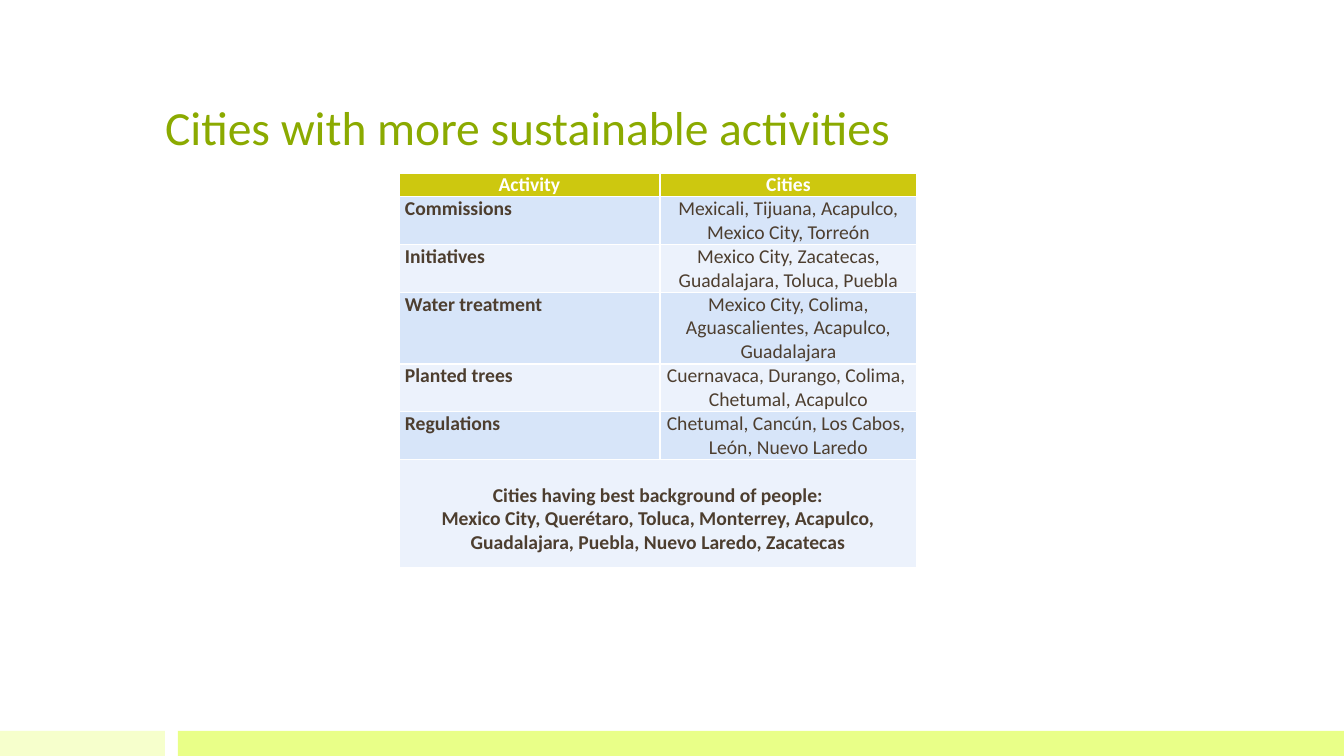
from pptx import Presentation
from pptx.dml.color import RGBColor
from pptx.enum.shapes import MSO_SHAPE
from pptx.enum.text import MSO_ANCHOR, MSO_AUTO_SIZE, PP_ALIGN
from pptx.util import Emu, Pt

RECT = MSO_SHAPE.RECTANGLE
BOTTOM = MSO_ANCHOR.BOTTOM
NO_FIT = MSO_AUTO_SIZE.NONE
LEFT, CENTER = PP_ALIGN.LEFT, PP_ALIGN.CENTER

SCALE = 12192000 / 1344  # EMU in one px
FONT = "Calibri"
WHITE = RGBColor(0xFF, 0xFF, 0xFF)
GREEN = RGBColor(0x8B, 0xAA, 0x00)
PALE = RGBColor(0xF6, 0xFF, 0xCC)
LIME = RGBColor(0xE9, 0xFF, 0x88)
OLIVE = RGBColor(0xCD, 0xC8, 0x0F)
BROWN = RGBColor(0x4D, 0x3E, 0x2F)
BANDS = (RGBColor(0xEC, 0xF2, 0xFC), RGBColor(0xD7, 0xE5, 0xF9))

COLS = (261, 257)
HEIGHTS = (23, 47, 47, 71, 47, 47, 108)
ROWS = (
    ("Activity", "Cities"),
    ("Commissions", "Mexicali, Tijuana, Acapulco, Mexico City, Torreón"),
    ("Initiatives", "Mexico City, Zacatecas, Guadalajara, Toluca, Puebla"),
    ("Water treatment",
     "Mexico City, Colima, Aguascalientes, Acapulco, Guadalajara"),
    ("Planted trees", "Cuernavaca, Durango, Colima, \nChetumal, Acapulco"),
    ("Regulations", "Chetumal, Cancún, Los Cabos, \nLeón, Nuevo Laredo"),
)
SUMMARY = ("Cities having best background of people:\n"
           "Mexico City, Querétaro, Toluca, Monterrey, Acapulco, "
           "Guadalajara, Puebla, Nuevo Laredo, Zacatecas")


def px(n):
    return Emu(round(n * SCALE))


def style(frame, size, color, bold=False, align=LEFT):
    for para in frame.paragraphs:
        para.alignment = align
        para.font.name = FONT
        para.font.size = Pt(size)
        para.font.bold = bold
        para.font.color.rgb = color


def add_bar(slide, left, width, color):
    bar = slide.shapes.add_shape(RECT, px(left), px(731), px(width), px(25))
    bar.shadow.inherit = False
    bar.fill.solid()
    bar.fill.fore_color.rgb = color
    bar.line.fill.background()


def set_title(slide, text):
    title = slide.shapes.title
    title.left, title.top = px(155), px(30)
    title.width, title.height = px(1033), px(130)
    frame = title.text_frame
    frame.text = text
    frame.auto_size = NO_FIT
    frame.vertical_anchor = BOTTOM
    style(frame, 34, GREEN)


def fill_cell(cell, text, fill, color, bold, align, top=0):
    cell.fill.solid()
    cell.fill.fore_color.rgb = fill
    cell.margin_left = cell.margin_right = px(6)
    cell.margin_top, cell.margin_bottom = px(top), 0
    cell.text = text
    style(cell.text_frame, 14, color, bold, align)


def add_cities(slide):
    frame = slide.shapes.add_table(len(HEIGHTS), len(COLS), px(399), px(173),
                                   px(sum(COLS)), px(sum(HEIGHTS)))
    table = frame.table
    for col, width in zip(table.columns, COLS):
        col.width = px(width)
    for row, height in zip(table.rows, HEIGHTS):
        row.height = px(height)

    # Header and activities
    for r, row in enumerate(ROWS):
        head = r == 0
        fill = OLIVE if head else BANDS[r % 2]
        color = WHITE if head else BROWN
        for c, text in enumerate(row):
            align = CENTER if head or c else LEFT
            fill_cell(table.cell(r, c), text, fill, color,
                      head or c == 0, align)

    # Summary across both columns
    last = len(ROWS)
    table.cell(last, 0).merge(table.cell(last, 1))
    fill_cell(table.cell(last, 0), SUMMARY, BANDS[0], BROWN, True, CENTER, 24)


def main():
    deck = Presentation()
    deck.slide_width, deck.slide_height = px(1344), px(756)
    slide = deck.slides.add_slide(deck.slide_layouts[5])

    # Footer bars
    add_bar(slide, 0, 165, PALE)
    add_bar(slide, 178, 1166, LIME)

    set_title(slide, "Cities with more sustainable activities")
    add_cities(slide)
    deck.save("out.pptx")


if __name__ == "__main__":
    main()
